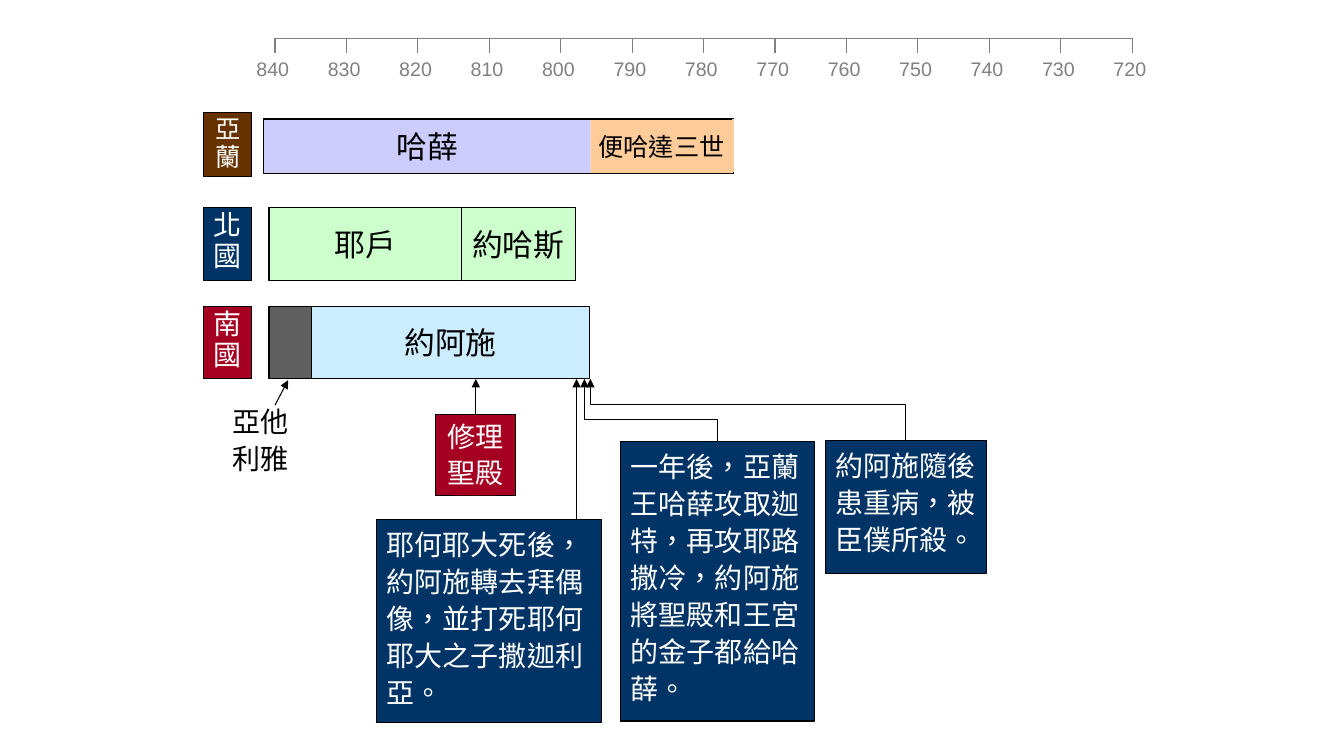
from lxml.etree import SubElement
from pptx import Presentation
from pptx.dml.color import RGBColor
from pptx.enum.lang import MSO_LANGUAGE_ID as Lang
from pptx.enum.shapes import MSO_CONNECTOR as Link, MSO_SHAPE as Preset
from pptx.enum.text import MSO_ANCHOR as Anchor, PP_ALIGN as Align
from pptx.oxml.ns import qn
from pptx.util import Cm, Pt

BLACK, WHITE, GREY = "000000", "FFFFFF", "808080"
NAVY, RED, BROWN, GREEN = "003366", "A50021", "663300", "CCFFCC"
CJK = "Noto Sans CJK SC"
DECADE = 1.8  # width of ten years on the scale

# Paragraph formats
TAG = {"alignment": Align.CENTER, "line_spacing": 0.85, "space_after": Pt(2)}
BAR = {"alignment": Align.CENTER}
EVENT = {"alignment": Align.CENTER, "space_after": Pt(2)}
CAPTION = {"alignment": Align.LEFT, "space_after": Pt(2)}
STORY = {"alignment": Align.LEFT, "line_spacing": 1.1}
YEAR = {"alignment": Align.RIGHT, "space_before": Pt(2.8)}


def color(value):
    return RGBColor.from_string(value)


def write(frame, text, size, text_color, form, font="Arial"):
    """Fill a text frame, one paragraph for each line of text."""
    for index, line in enumerate(text.split("\n")):
        para = frame.add_paragraph() if index else frame.paragraphs[0]
        for name, value in form.items():
            setattr(para, name, value)
        span = para.add_run()
        span.text = line
        looks = {"size": Pt(size), "name": font, "language_id": Lang.TRADITIONAL_CHINESE}
        for name, value in looks.items():
            setattr(span.font, name, value)
        span.font.color.rgb = color(text_color)
        if font == CJK:
            SubElement(span.font._element, qn("a:ea"), typeface=font)


def add_box(slide, place, fill=None, line=BLACK):
    box = slide.shapes.add_shape(Preset.RECTANGLE, *map(Cm, place))
    box.shadow.inherit = False
    if fill:
        box.fill.solid()
        box.fill.fore_color.rgb = color(fill)
    else:
        box.fill.background()
    if line:
        box.line.color.rgb = color(line)
        box.line.width = Pt(0.75)
    else:
        box.line.fill.background()
    return box


def add_label(slide, place, fill, text, size, form, text_color=WHITE,
              font="Arial", line=BLACK, anchor=Anchor.TOP, wrap=True):
    frame = add_box(slide, place, fill, line).text_frame
    frame.word_wrap, frame.vertical_anchor = wrap, anchor
    write(frame, text, size, text_color, form, font)


def add_bar(slide, place, fill, text, size=22, line=BLACK):
    add_label(slide, place, fill, text, size, BAR, BLACK, CJK, line, Anchor.MIDDLE, False)


def style_line(link, line_color=BLACK, width=0.75, arrow=True):
    link.line.color.rgb = color(line_color)
    link.line.width = Pt(width)
    if arrow:
        SubElement(link.line._get_or_add_ln(), qn("a:tailEnd"), type="triangle")
    SubElement(link._element.spPr, qn("a:effectLst"))


def add_line(slide, start, end, **looks):
    link = slide.shapes.add_connector(Link.STRAIGHT, *map(Cm, start + end))
    style_line(link, **looks)


def add_elbow(slide, start, end, bend):
    """Arrow going up, left, then up: a bent connector turned by 90 degrees."""
    (x1, y1), (x2, y2) = start, end
    middle_x, middle_y = (x1 + x2) / 2, (y1 + y2) / 2
    half_run, half_rise = (x1 - x2) / 2, (y1 - y2) / 2
    link = slide.shapes.add_connector(
        Link.ELBOW, Cm(middle_x + half_rise), Cm(middle_y - half_run),
        Cm(middle_x - half_rise), Cm(middle_y + half_run))
    properties = link._element.spPr
    properties.find(qn("a:xfrm")).set("rot", "5400000")
    guides = properties.find(qn("a:prstGeom")).get_or_add_avLst()
    SubElement(guides, qn("a:gd"), name="adj1", fmla=f"val {round(bend * 100000)}")
    style_line(link)


def add_scale_row(slide, left, top, count, border, fill=None):
    """One-row table whose cells are a decade wide; returns its cells."""
    table = slide.shapes.add_table(
        1, count, Cm(left), Cm(top), Cm(count * DECADE), Cm(0.61)).table
    table.first_row = table.horz_banding = False
    for column in table.columns:
        column.width = Cm(DECADE)
    cells = list(table.rows[0].cells)
    for cell in cells:
        properties = cell._tc.get_or_add_tcPr()
        for side in ("lnL", "lnR", "lnT", "lnB"):
            edge = SubElement(properties, qn(f"a:{side}"), w=str(Pt(1)))
            SubElement(SubElement(edge, qn("a:solidFill")), qn("a:srgbClr"), val=border)
        if fill:
            cell.fill.solid()
            cell.fill.fore_color.rgb = color(fill)
        else:
            cell.fill.background()
    return cells


def add_scale(slide):
    add_scale_row(slide, 6.93, 0.97, 12, GREY)
    years = range(840, 710, -10)
    cells = add_scale_row(slide, 5.74, 1.35, len(years), WHITE, WHITE)
    for cell, year in zip(cells, years):
        write(cell.text_frame, str(year), 14, GREY, YEAR)


def add_kingdoms(slide):
    # Kingdom tags
    for top, height, fill, text, size in (
            (5.23, 1.83, NAVY, "北\n國", 20),
            (2.84, 1.6, BROWN, "亞\n蘭", 18),
            (7.72, 1.83, RED, "南\n國", 20)):
        add_label(slide, (5.13, top, 1.22, height), fill, text, size, TAG, wrap=False)
    # Aram, open at its right end
    add_bar(slide, (14.88, 3, 3.58, 1.37), "FFCC99", "便哈達三世", 18, None)
    add_bar(slide, (6.65, 3, 8.23, 1.37), "CCCCFF", "哈薛", line=None)
    add_box(slide, (6.65, 3, 11.84, 1.37))
    add_line(slide, (18.47, 3), (18.47, 4.34), line_color="FFCC99", width=1.5, arrow=False)
    # North
    add_bar(slide, (6.78, 5.23, 4.85, 1.83), GREEN, "耶戶")
    add_bar(slide, (11.63, 5.23, 2.87, 1.83), GREEN, "約哈斯")
    # South
    add_box(slide, (6.78, 7.72, 1.07, 1.83), "5F5F5F")
    add_bar(slide, (7.85, 7.72, 7.01, 1.83), "CCECFF", "約阿施")


def add_events(slide):
    # Queen's name below the grey bar
    caption = slide.shapes.add_textbox(*map(Cm, (5.61, 10.08, 2.06, 2.03))).text_frame
    caption.word_wrap = True
    write(caption, "亞他\n利雅", 20, BLACK, CAPTION)
    add_line(slide, (6.93, 10.21), (7.26, 9.58))
    # Events with straight arrows
    add_line(slide, (11.99, 10.69), (11.99, 9.55))
    add_label(slide, (10.97, 10.44, 2.03, 2.06), RED, "修理\n聖殿", 20, EVENT)
    add_line(slide, (14.53, 13.39), (14.53, 9.55))
    # Stories
    for place, text in (
            ((9.5, 13.08, 5.66, 5.13),
             "耶何耶大死後，約阿施轉去拜偶像，並打死耶何耶大之子撒迦利亞。"),
            ((15.65, 11.13, 4.88, 7.04),
             "一年後，亞蘭王哈薛攻取迦特，再攻耶路撒冷，約阿施將聖殿和王宮的金子都給哈薛。"),
            ((20.8, 11.1, 4.06, 3.35), "約阿施隨後患重病，被臣僕所殺。")):
        add_label(slide, place, NAVY, text, 20, STORY)
    add_elbow(slide, (18.08, 11.13), (14.73, 9.55), 0.355)
    add_elbow(slide, (22.83, 11.1), (14.88, 9.55), 0.58)


def main():
    deck = Presentation()
    deck.slide_width, deck.slide_height = Cm(33.87), Cm(19.05)
    page = deck.slides.add_slide(deck.slide_layouts[6])
    add_scale(page)
    add_kingdoms(page)
    add_events(page)
    deck.save("out.pptx")


if __name__ == "__main__":
    main()
